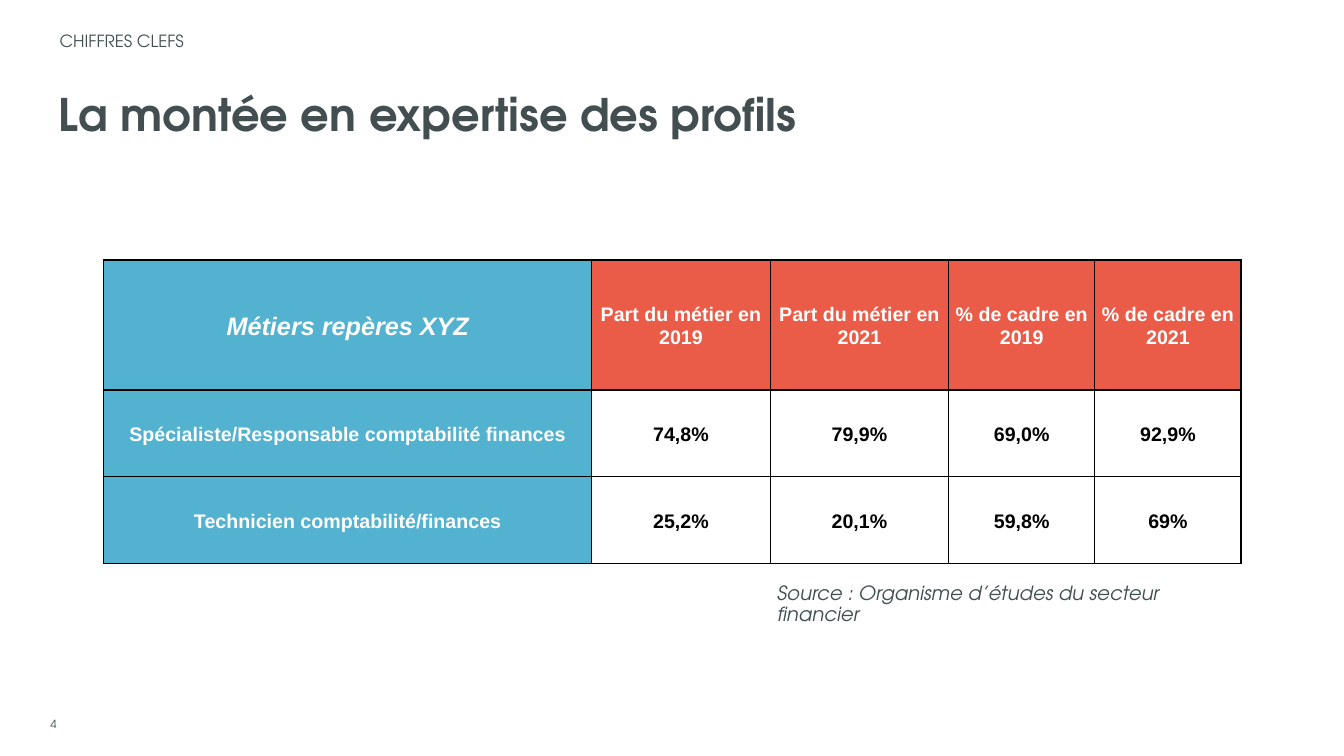
from dataclasses import dataclass

from lxml.etree import SubElement
from pptx import Presentation
from pptx.dml.color import RGBColor as Rgb
from pptx.enum.text import MSO_ANCHOR as Anchor, PP_ALIGN as Align
from pptx.oxml.ns import qn
from pptx.util import Inches, Pt


@dataclass(frozen=True)
class Theme:
    """Colours, fonts and type sizes of the slide."""
    ink: str = "424E50"
    blue: str = "52B2CF"
    red: str = "EA5C47"
    white: str = "FFFFFF"
    black: str = "000000"
    face: str = "TeX Gyre Adventor"
    grid: str = "Arial"
    title: int = 32
    head: int = 18
    body: int = 14
    label: int = 12
    page: int = 8


LOOK = Theme()
COLS = (4.84, 1.77, 1.77, 1.45, 1.45)
ROWS = (1.29, 0.86, 0.86)
DATA = (
    ("Métiers repères XYZ", "Part du métier en 2019", "Part du métier en 2021",
     "% de cadre en 2019", "% de cadre en 2021"),
    ("Spécialiste/Responsable comptabilité finances",
     "74,8%", "79,9%", "69,0%", "92,9%"),
    ("Technicien comptabilité/finances", "25,2%", "20,1%", "59,8%", "69%"),
)


def apply(obj, form):
    """Set each attribute named in a dict."""
    for name, value in form.items():
        setattr(obj, name, value)


def write(frame, text, size, color, face, font=None, para=None):
    """Put one formatted paragraph in a text frame."""
    line = frame.paragraphs[0]
    apply(line, para or {})
    run = line.add_run()
    run.text = text
    apply(run.font, {"size": Pt(size), "name": face, **(font or {})})
    run.font.color.rgb = Rgb.from_string(color)


def label(slide, box, text, size, pad=(0, 0, 0, 0), font=None, para=None):
    """Add a text box in the given box."""
    frame = slide.shapes.add_textbox(*map(Inches, box)).text_frame
    sides = ("left", "top", "right", "bottom")
    apply(frame, {"word_wrap": True, "vertical_anchor": Anchor.TOP,
                  **{f"margin_{s}": Inches(p) for s, p in zip(sides, pad)}})
    write(frame, text, size, LOOK.ink, LOOK.face, font, para)


def edge(cell):
    """Draw a thin black line on each side of a cell."""
    props = cell._tc.get_or_add_tcPr()
    for spot, side in enumerate(("lnL", "lnR", "lnT", "lnB")):
        line = SubElement(props, qn(f"a:{side}"), w=str(Pt(1)))
        fill = SubElement(line, qn("a:solidFill"))
        SubElement(fill, qn("a:srgbClr"), val=LOOK.black)
        props.insert(spot, line)


def fill_cell(cell, text, row, col):
    """Style a cell by its place in the grid."""
    tint = LOOK.blue if col == 0 else LOOK.red if row == 0 else None
    if tint:
        cell.fill.solid()
        cell.fill.fore_color.rgb = Rgb.from_string(tint)
    else:
        cell.fill.background()
    thin = Inches(0.01)
    apply(cell, {"vertical_anchor": Anchor.MIDDLE, "margin_left": thin,
                 "margin_top": thin, "margin_right": thin, "margin_bottom": 0})
    first = row == col == 0
    write(cell.text_frame, text, LOOK.head if first else LOOK.body,
          LOOK.white if tint else LOOK.black, LOOK.grid,
          {"bold": True, "italic": first},
          {"alignment": Align.CENTER, "line_spacing": 1.07,
           "space_after": Pt(8)})
    edge(cell)


def jobs(slide, box):
    """Add the table of job shares."""
    table = slide.shapes.add_table(len(ROWS), len(COLS),
                                   *map(Inches, box)).table
    apply(table, {"first_row": False, "horz_banding": False})
    for col, width in zip(table.columns, COLS):
        col.width = Inches(width)
    for row, height in zip(table.rows, ROWS):
        row.height = Inches(height)
    for r, texts in enumerate(DATA):
        for c, text in enumerate(texts):
            fill_cell(table.cell(r, c), text, r, c)


def header(slide, box):
    """Add the section label and the title."""
    left, top, width, height = box
    label(slide, (left + 0.01, top, 3.89, 0.2), "CHIFFRES CLEFS", LOOK.label,
          para={"alignment": Align.JUSTIFY, "space_after": Pt(12)})
    label(slide, (left, top + 0.53, width, height - 0.53),
          "La montée en expertise des profils", LOOK.title,
          (0, 0.12, 0, 0), {"bold": True}, {"line_spacing": 0.8})


def main():
    """Build and save the slide."""
    deck = Presentation()
    apply(deck, {"slide_width": Inches(13.33), "slide_height": Inches(7.5)})
    slide = deck.slides.add_slide(deck.slide_layouts[6])
    header(slide, (0.58, 0.31, 11.84, 1.51))
    jobs(slide, (1.03, 2.58, sum(COLS), sum(ROWS)))
    label(slide, (7.61, 5.74, 4.81, 0.31),
          "Source : Organisme d’études du secteur financier", LOOK.body,
          (0.1, 0.05, 0.1, 0.05), {"italic": True},
          {"line_spacing": 0.9, "space_after": Pt(6)})
    label(slide, (0.5, 7.12, 6.67, 0.13), "4", LOOK.page)
    deck.save("out.pptx")


if __name__ == "__main__":
    main()
